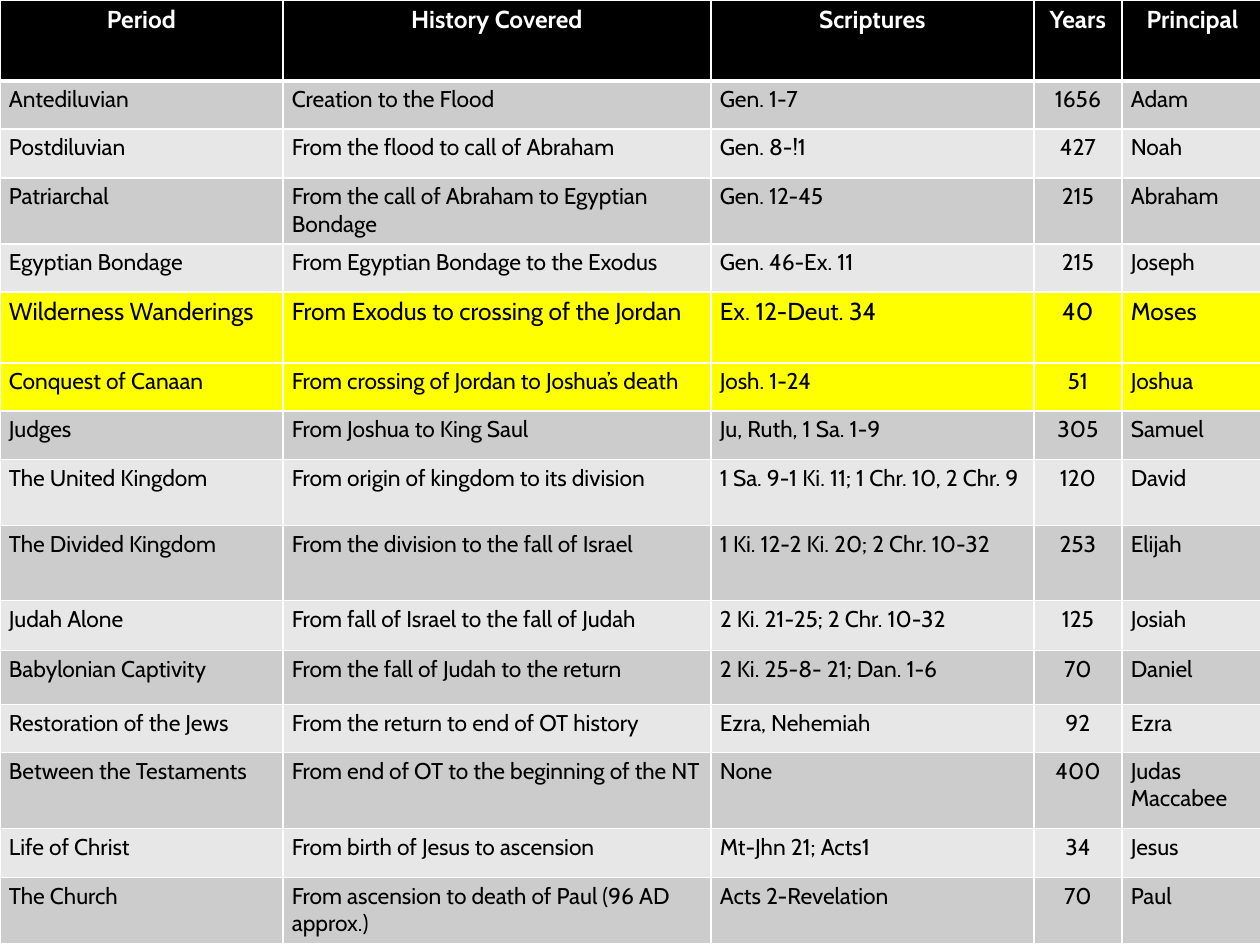
from lxml import etree
from pptx import Presentation, util as u
from pptx.dml.color import RGBColor
from pptx.enum import text
from pptx.oxml import ns

BLACK = RGBColor(0x00, 0x00, 0x00)
WHITE = RGBColor(0xFF, 0xFF, 0xFF)
GREY = RGBColor(0xCC, 0xCC, 0xCC)
PALE = RGBColor(0xE7, 0xE7, 0xE7)
YELLOW = RGBColor(0xFF, 0xFF, 0x00)

FONT = "Cabin"
WIDTH, HEIGHT = 1260, 945
COLUMN_WIDTHS = [283, 428, 323, 88, 147]
YEARS_COLUMN = 3
HIGHLIGHTED = (5, 6)
ENLARGED = (0, 5)

HEADER = ("Period", "History Covered", "Scriptures", "Years", "Principal ")

# Row height, then the five cells
PERIODS = [
    (48, "Antediluvian", "Creation to the Flood", "Gen. 1-7", "1656", "Adam"),
    (49, "Postdiluvian", "From the flood to call of Abraham", "Gen. 8-!1", "427", "Noah"),
    (66, "Patriarchal", "From the call of Abraham to Egyptian Bondage", "Gen. 12-45",
     "215", "Abraham"),
    (48, "Egyptian Bondage", "From Egyptian Bondage to the Exodus", "Gen. 46-Ex. 11",
     "215", "Joseph"),
    (71, "Wilderness Wanderings", "From Exodus to crossing of the Jordan",
     "Ex. 12-Deut. 34", "40", "Moses"),
    (48, "Conquest of Canaan", "From crossing of Jordan to Joshua’s death", "Josh. 1-24",
     "51", "Joshua"),
    (49, "Judges", "From Joshua to King Saul", "Ju, Ruth, 1 Sa. 1-9", "305", "Samuel"),
    (66, "The United Kingdom", "From origin of kingdom to its division",
     "1 Sa. 9-1 Ki. 11; 1 Chr. 10, 2 Chr. 9", "120", "David"),
    (75, "The Divided Kingdom", "From the division to the fall of Israel",
     "1 Ki. 12-2 Ki. 20; 2 Chr. 10-32", "253", "Elijah"),
    (50, "Judah Alone", "From fall of Israel to the fall of Judah",
     "2 Ki. 21-25; 2 Chr. 10-32", "125", "Josiah"),
    (54, "Babylonian Captivity", "From the fall of Judah to the return",
     "2 Ki. 25-8- 21; Dan. 1-6", "70", "Daniel"),
    (48, "Restoration of the Jews", "From the return to end of OT history",
     "Ezra, Nehemiah", "92", "Ezra"),
    (76, "Between the Testaments", "From end of OT to the beginning of the NT", "None",
     "400", "Judas Maccabee"),
    (49, "Life of Christ", "From birth of Jesus to ascension", "Mt-Jhn 21; Acts1",
     "34", "Jesus"),
    (66, "The Church", "From ascension to death of Paul (96 AD approx.)",
     "Acts 2-Revelation", "70", "Paul"),
]
ROWS = [(81, *HEADER)] + PERIODS


def px(n):
    return u.Emu(round(n * 914400 / 126))


def set_borders(cell, row):
    """White rules all round, thicker between the header and the first period."""
    tc_pr = cell._tc.get_or_add_tcPr()
    for side in "LRTB":
        thick = (row, side) in ((0, "B"), (1, "T"))
        ln = etree.SubElement(tc_pr, ns.qn("a:ln" + side), w=str(u.Pt(3 if thick else 1)))
        fill = etree.SubElement(ln, ns.qn("a:solidFill"))
        etree.SubElement(fill, ns.qn("a:srgbClr"), val=str(WHITE))


def row_fill(row):
    if row == 0:
        return BLACK
    if row in HIGHLIGHTED:
        return YELLOW
    return GREY if row % 2 else PALE


def fill_cell(cell, row, column, words):
    set_borders(cell, row)
    cell.fill.solid()
    cell.fill.fore_color.rgb = row_fill(row)
    cell.margin_left = cell.margin_right = px(9)
    cell.margin_top = cell.margin_bottom = px(5)
    p = cell.text_frame.paragraphs[0]
    centred = row == 0 or column == YEARS_COLUMN
    p.alignment = text.PP_ALIGN.CENTER if centred else text.PP_ALIGN.LEFT
    r = p.add_run()
    r.text = words
    r.font.name = FONT
    r.font.size = u.Pt(14 if row in ENLARGED else 13)
    r.font.bold = row == 0
    r.font.color.rgb = WHITE if row == 0 else BLACK


def add_period_table(s, left, top):
    width, height = sum(COLUMN_WIDTHS), sum(row[0] for row in ROWS)
    frame = s.shapes.add_table(len(ROWS), len(COLUMN_WIDTHS),
                               px(left), px(top), px(width), px(height))
    table = frame.table
    table.horz_banding = False
    for column, column_width in zip(table.columns, COLUMN_WIDTHS):
        column.width = px(column_width)
    for i, (row_height, *cells) in enumerate(ROWS):
        table.rows[i].height = px(row_height)
        for j, words in enumerate(cells):
            fill_cell(table.cell(i, j), i, j, words)


def main():
    prs = Presentation()
    prs.slide_width, prs.slide_height = px(WIDTH), px(HEIGHT)
    s = prs.slides.add_slide(prs.slide_layouts[6])
    add_period_table(s, 0, 0)
    prs.save("out.pptx")


if __name__ == "__main__":
    main()
